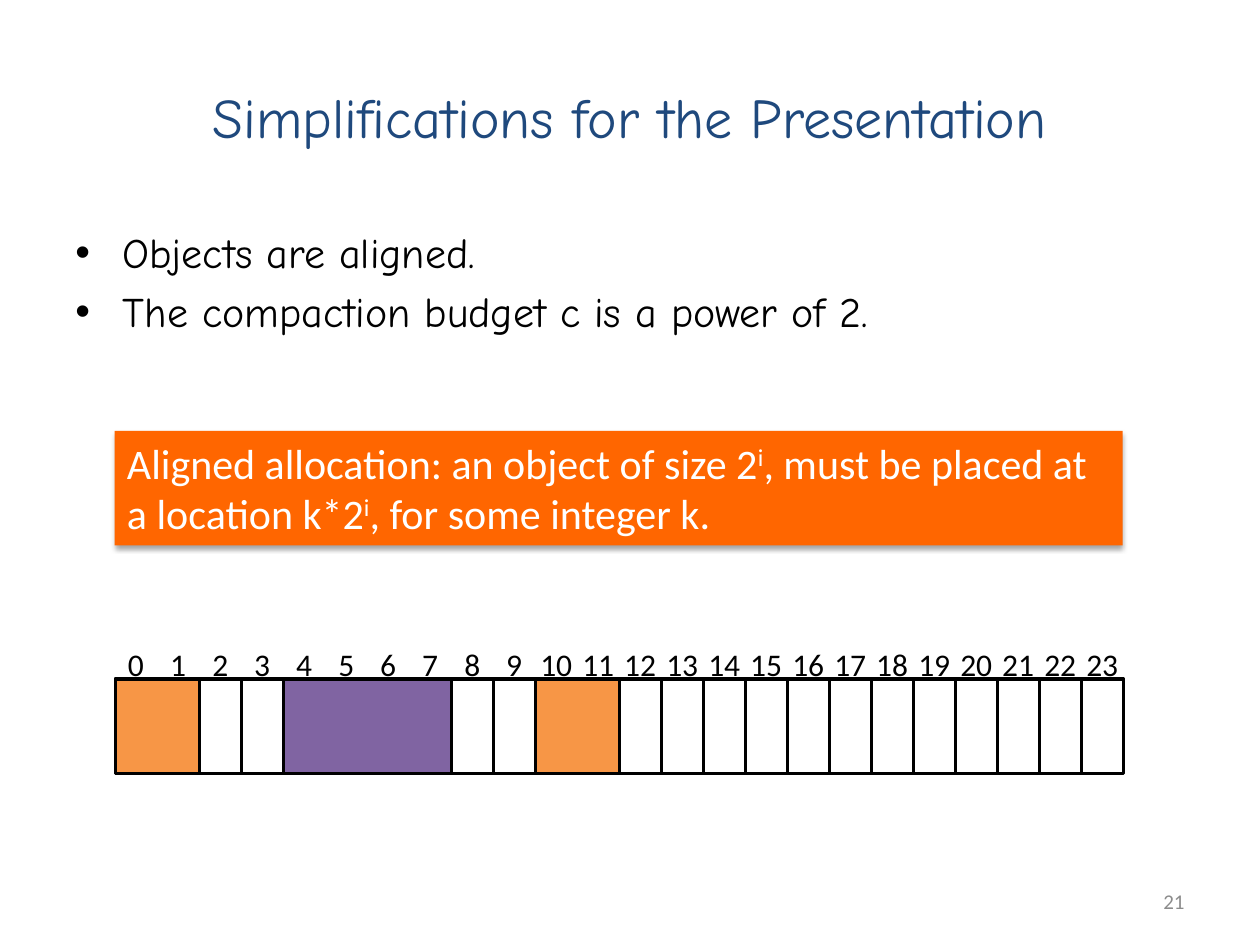
from dataclasses import dataclass
from typing import Any

from lxml.etree import SubElement
from pptx import Presentation
from pptx.dml.color import RGBColor
from pptx.enum.shapes import MSO_SHAPE
from pptx.enum.text import MSO_ANCHOR, PP_ALIGN
from pptx.oxml.ns import qn
from pptx.util import Pt


@dataclass(frozen=True)
class Theme:
    heading_font: str = "Comic Neue"
    plain_font: str = "Calibri"
    title_size: float = 32
    body_size: float = 24
    label_size: float = 18
    number_size: float = 12
    navy: str = "1F497D"
    black: str = "000000"
    white: str = "FFFFFF"
    grey: str = "8C8C8C"
    banner: str = "FF6600"
    orange: str = "F79646"
    purple: str = "8064A2"


@dataclass(frozen=True)
class Box:
    left: float
    top: float
    width: float
    height: float


@dataclass(frozen=True)
class Block:
    first: int
    cells: int
    color: str


THEME = Theme()
INSET = 7.2
CELL_COUNT = 24
CELL_WIDTH = 24
MEMORY = Box(66, 388, CELL_COUNT * CELL_WIDTH, 54)
EMPTY_CELLS = [Block(cell, 1, THEME.white) for cell in range(CELL_COUNT)]
OBJECTS = [
    Block(0, 2, THEME.orange),
    Block(10, 2, THEME.orange),
    Block(4, 4, THEME.purple),
]


def apply(target: Any, values: dict[str, Any]) -> None:
    for attribute, value in values.items():
        setattr(target, attribute, value)


def place(box: Box) -> dict[str, Any]:
    return {
        "left": Pt(box.left),
        "top": Pt(box.top),
        "width": Pt(box.width),
        "height": Pt(box.height),
    }


def write(paragraph: Any, text: str, font: str, size: float, color: str) -> Any:
    run = paragraph.add_run()
    run.text = text
    apply(run.font, {"name": font, "size": Pt(size)})
    run.font.color.rgb = RGBColor.from_string(color)
    return run


def add_text_frame(slide: Any, box: Box) -> Any:
    frame = slide.shapes.add_textbox(**place(box)).text_frame
    frame.word_wrap = True
    return frame


def add_rectangle(slide: Any, box: Box, color: str) -> Any:
    rectangle = slide.shapes.add_shape(MSO_SHAPE.RECTANGLE, **place(box))
    rectangle.shadow.inherit = False
    rectangle.fill.solid()
    rectangle.fill.fore_color.rgb = RGBColor.from_string(color)
    return rectangle


def add_block(slide: Any, block: Block) -> None:
    left = MEMORY.left + block.first * CELL_WIDTH
    box = Box(left, MEMORY.top, block.cells * CELL_WIDTH, MEMORY.height)
    rectangle = add_rectangle(slide, box, block.color)
    rectangle.line.width = Pt(2)
    rectangle.line.color.rgb = RGBColor.from_string(THEME.black)


def add_title(slide: Any) -> None:
    title = slide.shapes.title
    apply(title, place(Box(36, 21.6, 648, 90)))
    title.text_frame.vertical_anchor = MSO_ANCHOR.MIDDLE
    paragraph = title.text_frame.paragraphs[0]
    paragraph.alignment = PP_ALIGN.CENTER
    write(paragraph, "Simplifications for the Presentation",
          THEME.heading_font, THEME.title_size, THEME.navy)


def add_simplifications(slide: Any, statements: list[str]) -> None:
    frame = add_text_frame(slide, Box(36, 126, 648, 360))
    for position, statement in enumerate(statements):
        paragraph = frame.add_paragraph() if position else frame.paragraphs[0]
        paragraph.space_before = Pt(THEME.body_size * 0.2)
        properties = paragraph._p.get_or_add_pPr()
        properties.set("marL", str(Pt(27)))
        properties.set("indent", str(Pt(-27)))
        SubElement(properties, qn("a:buFont"), typeface="Arial")
        SubElement(properties, qn("a:buChar"), char="•")
        write(paragraph, statement, THEME.heading_font, THEME.body_size, THEME.black)


def add_definition(slide: Any) -> None:
    banner = add_rectangle(slide, Box(65.5, 246.2, 576, 65.5), THEME.banner)
    banner.line.fill.background()
    effects = banner._element.spPr.find(qn("a:effectLst"))
    shadow = SubElement(effects, qn("a:outerShdw"), blurRad=str(Pt(3.1)),
                        dist=str(Pt(1.8)), dir="5400000", rotWithShape="0")
    tint = SubElement(shadow, qn("a:srgbClr"), val=THEME.black)
    SubElement(tint, qn("a:alpha"), val="35000")
    frame = banner.text_frame
    apply(frame, {"word_wrap": True, "vertical_anchor": MSO_ANCHOR.TOP})
    paragraph = frame.paragraphs[0]
    paragraph.alignment = PP_ALIGN.LEFT
    pieces = [
        "Aligned allocation: an object of size 2", "i",
        ", must be placed at a location k*2", "i",
        ", for some integer k.",
    ]
    for piece in pieces:
        run = write(paragraph, piece, THEME.plain_font, THEME.body_size, THEME.white)
        if piece == "i":
            run._r.get_or_add_rPr().set("baseline", "30000")


def add_addresses(slide: Any) -> None:
    frame = add_text_frame(slide, Box(MEMORY.left, 365, 590, 29))
    paragraph = frame.paragraphs[0]
    stops = SubElement(paragraph._p.get_or_add_pPr(), qn("a:tabLst"))
    for cell in range(1, CELL_COUNT):
        center = (cell + 0.5) * CELL_WIDTH - INSET
        SubElement(stops, qn("a:tab"), pos=str(Pt(center)), algn="ctr")
    addresses = "\t".join(str(cell) for cell in range(CELL_COUNT))
    write(paragraph, addresses, THEME.plain_font, THEME.label_size, THEME.black)


def add_page_number(slide: Any) -> None:
    frame = add_text_frame(slide, Box(516, 500.5, 168, 28.8))
    frame.vertical_anchor = MSO_ANCHOR.MIDDLE
    paragraph = frame.paragraphs[0]
    paragraph.alignment = PP_ALIGN.RIGHT
    write(paragraph, "21", THEME.plain_font, THEME.number_size, THEME.grey)


def main() -> None:
    presentation = Presentation()
    apply(presentation, {"slide_width": Pt(720), "slide_height": Pt(540)})
    slide = presentation.slides.add_slide(presentation.slide_layouts[5])
    add_title(slide)
    add_simplifications(slide, [
        "Objects are aligned.",
        "The compaction budget c is a power of 2.",
    ])
    add_page_number(slide)
    add_definition(slide)
    for cell in EMPTY_CELLS:
        add_block(slide, cell)
    add_addresses(slide)
    for allocated in OBJECTS:
        add_block(slide, allocated)
    presentation.save("out.pptx")


if __name__ == "__main__":
    main()
